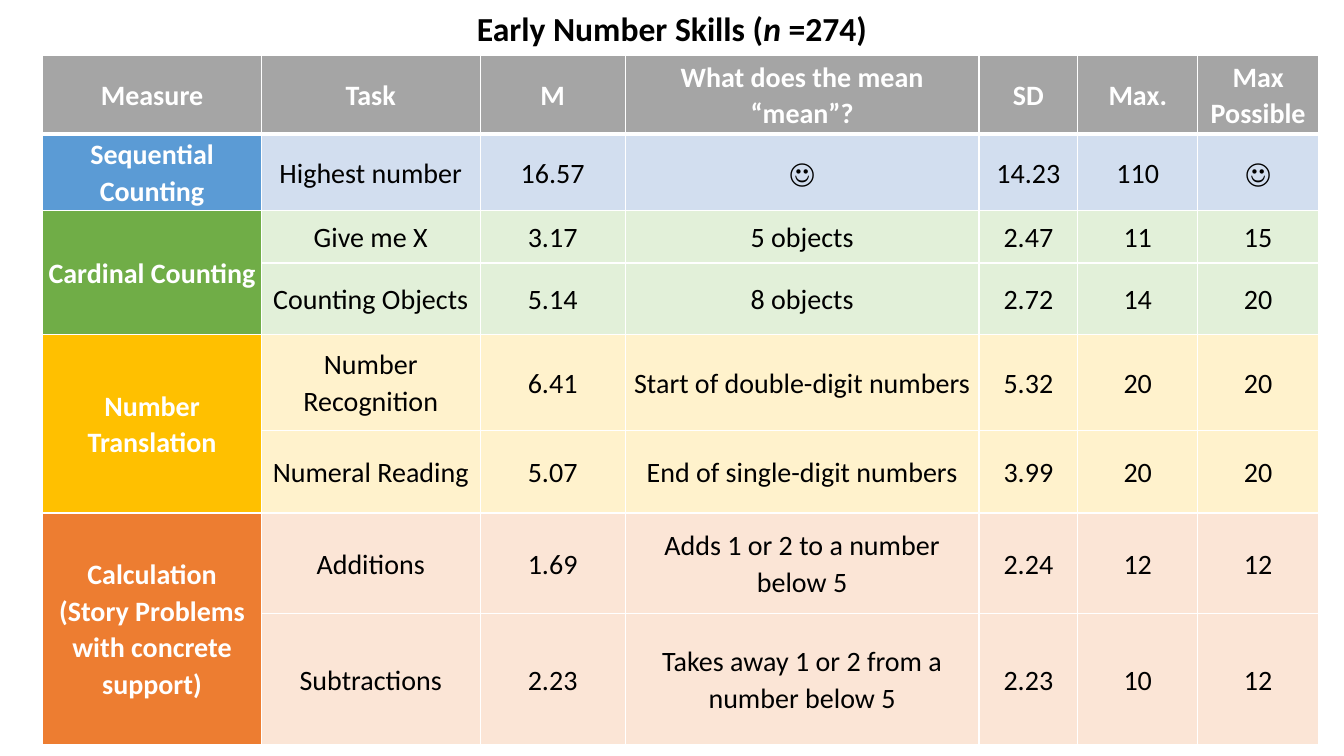
from lxml.etree import SubElement
from pptx import Presentation
from pptx.dml.color import RGBColor as RGB
from pptx.enum.text import MSO_ANCHOR as ANCHOR, PP_ALIGN as ALIGN
from pptx.oxml.ns import qn
from pptx.util import Pt

WHITE = RGB(0xFF, 0xFF, 0xFF)
BLACK = RGB(0x00, 0x00, 0x00)
GRAY = RGB(0xA5, 0xA5, 0xA5)
BLUE, PALE_BLUE = RGB(0x5B, 0x9B, 0xD5), RGB(0xD2, 0xDE, 0xEF)
GREEN, PALE_GREEN = RGB(0x70, 0xAD, 0x47), RGB(0xE2, 0xF0, 0xD9)
GOLD, PALE_GOLD = RGB(0xFF, 0xC0, 0x00), RGB(0xFF, 0xF2, 0xCC)
ORANGE, PALE_ORANGE = RGB(0xED, 0x7D, 0x31), RGB(0xFB, 0xE5, 0xD6)

FONT = "Calibri"
HEADERS = ["Measure", "Task", "M", "What does the mean “mean”?", "SD", "Max.", "Max Possible"]
MEASURES = [
    ("Sequential Counting", BLUE, PALE_BLUE, [
        ["Highest number", "16.57", "☺", "14.23", "110", "☺"]]),
    ("Cardinal Counting", GREEN, PALE_GREEN, [
        ["Give me X", "3.17", "5 objects", "2.47", "11", "15"],
        ["Counting Objects", "5.14", "8 objects", "2.72", "14", "20"]]),
    ("Number Translation", GOLD, PALE_GOLD, [
        ["Number Recognition", "6.41", "Start of double-digit numbers", "5.32", "20", "20"],
        ["Numeral Reading", "5.07", "End of single-digit numbers", "3.99", "20", "20"]]),
    ("Calculation\n(Story Problems with concrete support)", ORANGE, PALE_ORANGE, [
        ["Additions", "1.69", "Adds 1 or 2 to a number below 5", "2.24", "12", "12"],
        ["Subtractions", "2.23", "Takes away 1 or 2 from a number below 5", "2.23", "10", "12"]]),
]
COL_WIDTHS = [156.24, 156.24, 103.68, 252.72, 70.56, 85.68, 86.4]
ROW_HEIGHTS = [56.16, 54.72, 37.44, 51.12, 68.4, 59.04, 72, 93.6]


def set_attrs(obj, values):
    for name, value in values.items():
        setattr(obj, name, value)


def format_run(r, size, color, bold, italic=False):
    set_attrs(r.font, {"name": FONT, "size": Pt(size), "bold": bold, "italic": italic})
    r.font.color.rgb = color


def add_title(slide, left, top, width, height):
    tf = slide.shapes.add_textbox(Pt(left), Pt(top), Pt(width), Pt(height)).text_frame
    set_attrs(tf, {"word_wrap": True, "vertical_anchor": ANCHOR.MIDDLE,
                   "margin_top": 0, "margin_bottom": 0})
    p = tf.paragraphs[0]
    set_attrs(p, {"alignment": ALIGN.CENTER, "line_spacing": 0.9})
    for text, italic in [("Early Number Skills (", False), ("n", True), (" =274)", False)]:
        r = p.add_run()
        r.text = text
        format_run(r, 24, BLACK, True, italic)


def set_borders(cell, widths):
    tc_pr = cell._tc.get_or_add_tcPr()
    for side, width in widths.items():
        ln = SubElement(tc_pr, qn(f"a:ln{side}"), w=str(Pt(width)))
        fill = SubElement(ln, qn("a:solidFill"))
        SubElement(fill, qn("a:srgbClr"), val=str(WHITE))


def format_cell(cell, text, fill, color, bold, top=1, bottom=1):
    set_borders(cell, {"L": 1, "R": 1, "T": top, "B": bottom})
    cell.fill.solid()
    cell.fill.fore_color.rgb = fill
    set_attrs(cell, {"vertical_anchor": ANCHOR.MIDDLE, "margin_left": Pt(2.16),
                     "margin_right": Pt(2.16), "margin_top": 0, "margin_bottom": 0})
    cell.text = text
    for p in cell.text_frame.paragraphs:
        set_attrs(p, {"alignment": ALIGN.CENTER, "line_spacing": 1.07})
        for r in p.runs:
            format_run(r, 20, color, bold)


def add_skills_table(slide, left, top, width, height):
    table = slide.shapes.add_table(len(ROW_HEIGHTS), len(COL_WIDTHS),
                                   Pt(left), Pt(top), Pt(width), Pt(height)).table
    for col, share in zip(table.columns, COL_WIDTHS):
        col.width = Pt(width * share / sum(COL_WIDTHS))
    for row, share in zip(table.rows, ROW_HEIGHTS):
        row.height = Pt(height * share / sum(ROW_HEIGHTS))
    for j, header in enumerate(HEADERS):
        format_cell(table.cell(0, j), header, GRAY, WHITE, True, bottom=3)
    i = 1
    for measure, strong, pale, tasks in MEASURES:
        first = i
        for task in tasks:
            edge = 3 if i == 1 else 1
            format_cell(table.cell(i, 0), measure if i == first else "", strong, WHITE, True, top=edge)
            for j, value in enumerate(task, 1):
                format_cell(table.cell(i, j), value, pale, BLACK, False, top=edge)
            i += 1
        if len(tasks) > 1:
            table.cell(first, 0).merge(table.cell(i - 1, 0))


def main():
    prs = Presentation()
    set_attrs(prs, {"slide_width": Pt(960), "slide_height": Pt(540)})
    slide = prs.slides.add_slide(prs.slide_layouts[6])
    add_title(slide, 66, 4.32, 828, 34.56)
    add_skills_table(slide, 30.5, 39.6, sum(COL_WIDTHS), sum(ROW_HEIGHTS))
    prs.save("out.pptx")


if __name__ == "__main__":
    main()
